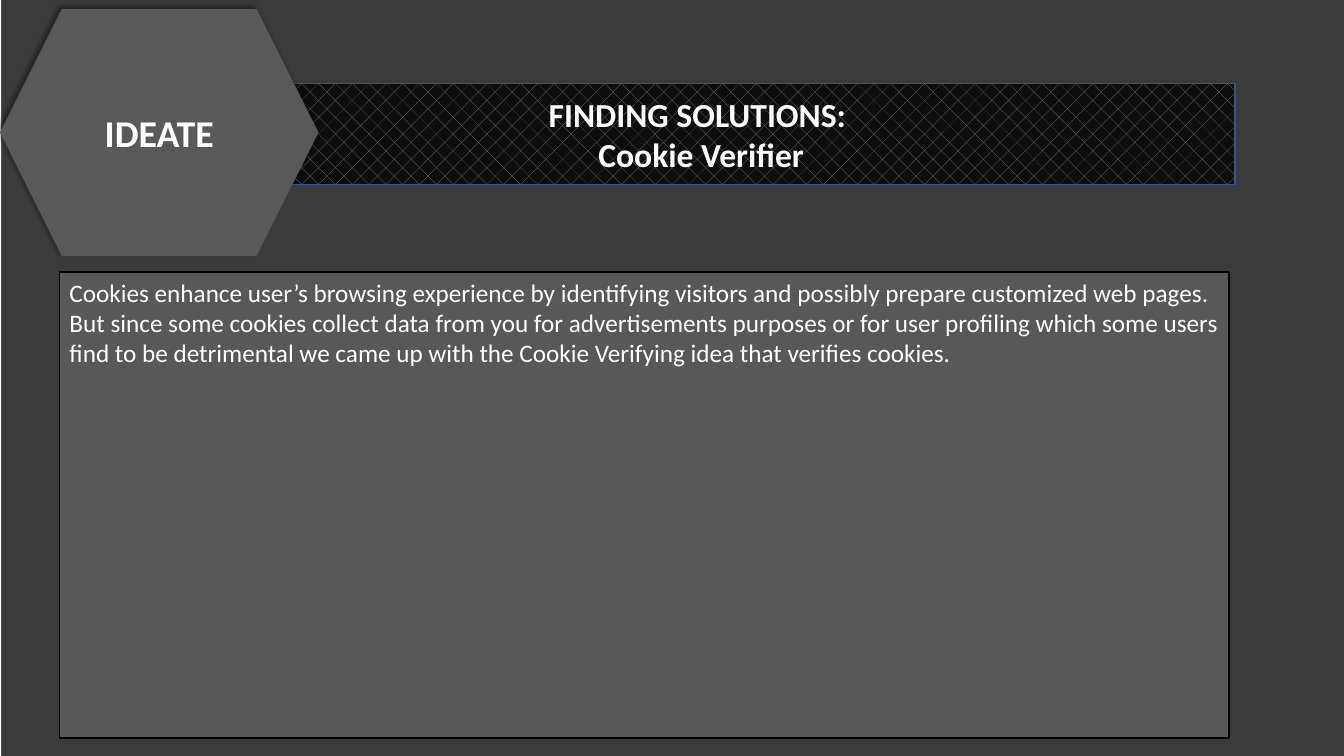
from dataclasses import dataclass

from lxml.etree import SubElement
from pptx import Presentation
from pptx.dml.color import RGBColor
from pptx.enum.dml import MSO_PATTERN
from pptx.enum.shapes import MSO_SHAPE
from pptx.enum.text import MSO_ANCHOR, PP_ALIGN
from pptx.oxml.ns import qn
from pptx.util import Inches, Pt


@dataclass(frozen=True)
class Theme:
    font: str = "Calibri"
    white: str = "FFFFFF"
    black: str = "000000"
    ink: str = "0D0D0D"
    mesh: str = "808080"
    gray: str = "595959"
    blue: str = "325491"
    badge: int = 27
    title: int = 24
    body: int = 18


class Board:
    def __init__(self, deck, theme):
        self.theme = theme
        self.column = deck.slide_width / 100
        self.row = deck.slide_height / 100
        self.slide = deck.slides.add_slide(deck.slide_layouts[6])

    def shape(self, kind, left, top, width, height, edge=None):
        item = self.slide.shapes.add_shape(
            kind, int(left * self.column), int(top * self.row),
            int(width * self.column), int(height * self.row))
        item.shadow.inherit = False
        if edge:
            item.line.color.rgb = RGBColor.from_string(edge)
            item.line.width = Pt(1)
        else:
            item.line.fill.background()
        return item

    def tint(self, node, alpha):
        SubElement(node, qn("a:alpha"), val=str(alpha * 1000))

    def paint(self, item, color, alpha=100):
        item.fill.solid()
        item.fill.fore_color.rgb = RGBColor.from_string(color)
        if alpha < 100:
            fill = item._element.spPr.find(qn("a:solidFill"))
            self.tint(fill.find(qn("a:srgbClr")), alpha)

    def weave(self, item, fore, back):
        item.fill.patterned()
        item.fill.pattern = MSO_PATTERN.DIAGONAL_BRICK
        item.fill.fore_color.rgb = RGBColor.from_string(fore)
        item.fill.back_color.rgb = RGBColor.from_string(back)

    def shade(self, item, color, alpha, blur, gap, angle):
        effects = item._element.spPr.find(qn("a:effectLst"))
        shadow = SubElement(
            effects, qn("a:outerShdw"), blurRad=str(int(Pt(blur))),
            dist=str(int(Pt(gap))), dir=str(angle * 60000),
            algn="br", rotWithShape="0")
        self.tint(SubElement(shadow, qn("a:srgbClr"), val=color), alpha)

    def label(self, item, lines, size, bold=False,
              align=PP_ALIGN.CENTER, anchor=MSO_ANCHOR.MIDDLE):
        frame = item.text_frame
        frame.word_wrap = True
        frame.vertical_anchor = anchor
        frame.text = "\n".join(lines)
        for para in frame.paragraphs:
            para.alignment = align
            para.font.name = self.theme.font
            para.font.size = Pt(size)
            para.font.bold = bold
            para.font.color.rgb = RGBColor.from_string(self.theme.white)


def main():
    deck = Presentation()
    deck.slide_width, deck.slide_height = Inches(13.33), Inches(7.5)
    theme = Theme()
    board = Board(deck, theme)
    box = MSO_SHAPE.RECTANGLE

    back = board.shape(box, 0.1, -0.5, 100, 101, theme.blue)
    board.paint(back, theme.black, 77)

    band = board.shape(box, 12.45, 11.07, 79.45, 13.33, theme.blue)
    board.weave(band, theme.mesh, theme.ink)
    board.label(band, ["FINDING SOLUTIONS: ", "Cookie Verifier"],
                theme.title, bold=True)

    badge = board.shape(MSO_SHAPE.HEXAGON, 0, 1.2, 23.7, 32.67)
    board.paint(badge, theme.gray)
    board.shade(badge, theme.black, 40, 4, 3, 225)
    board.label(badge, ["IDEATE"], theme.badge, bold=True)

    panel = board.shape(box, 4.43, 36, 87.02, 61.6, theme.black)
    board.paint(panel, theme.white, 15)
    board.label(panel, [
        "Cookies enhance user’s browsing experience by identifying visitors "
        "and possibly prepare customized web pages. But since some cookies "
        "collect data from you for advertisements purposes or for user "
        "profiling which some users find to be detrimental we came up with "
        "the Cookie Verifying idea that verifies cookies."],
        theme.body, align=PP_ALIGN.LEFT, anchor=MSO_ANCHOR.TOP)

    deck.save("out.pptx")


if __name__ == "__main__":
    main()
